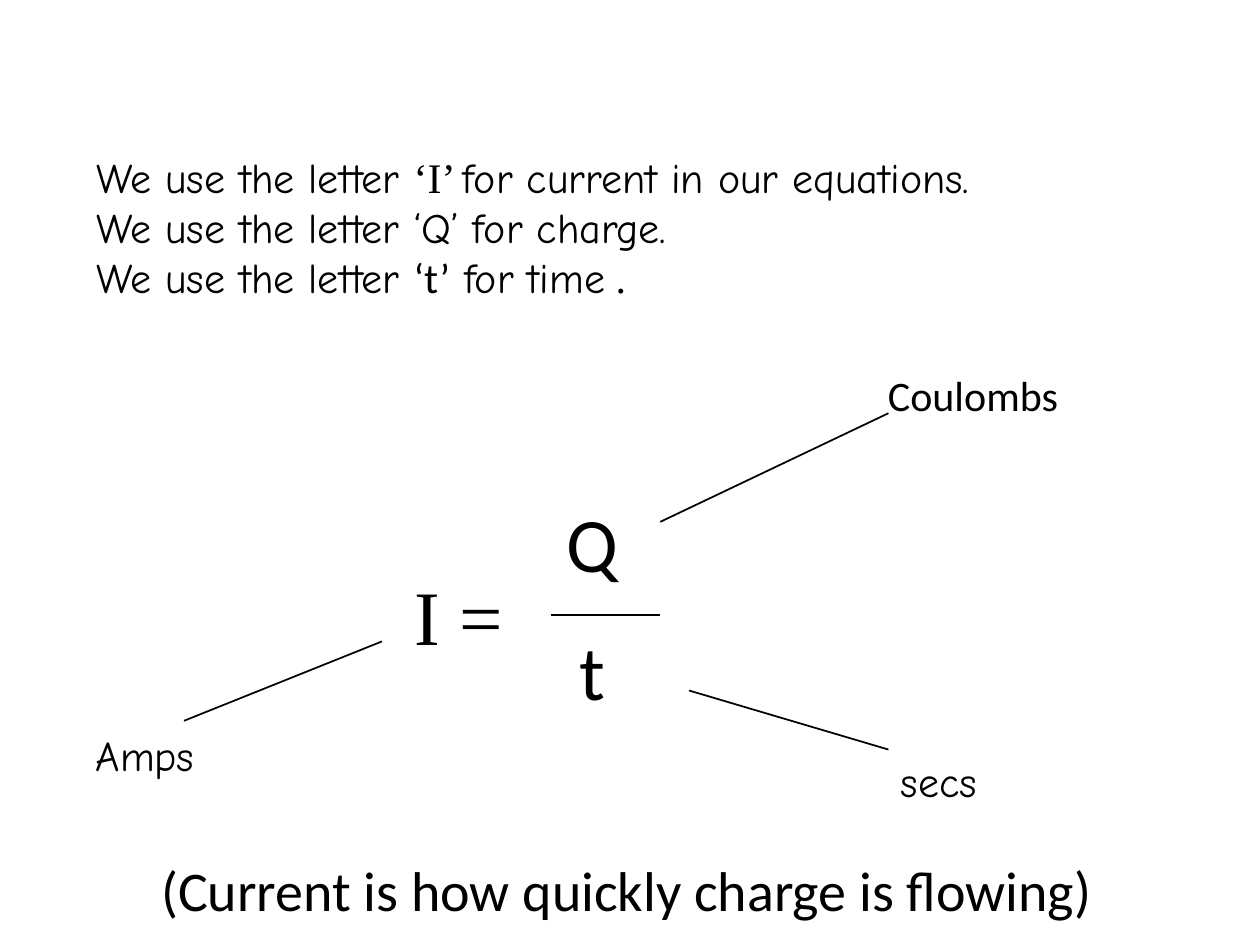
from dataclasses import dataclass

from lxml import etree
from pptx import Presentation
from pptx import util as u
from pptx.dml import color
from pptx.enum import shapes, text
from pptx.oxml import ns


@dataclass(frozen=True)
class Theme:
    ink: color.RGBColor = color.RGBColor(0, 0, 0)
    paper: color.RGBColor = color.RGBColor(255, 255, 255)
    hand: str = "Comic Neue"
    plain: str = "Calibri"
    serif: str = "Times New Roman"
    body: int = 24
    summary: int = 32
    symbol: int = 44
    bar: float = 0.75
    pointer: float = 1


THEME = Theme()


def add_text(slide, place, size, paragraphs):
    """Place a text box; each paragraph is a list of (wording, font) pairs."""
    box = slide.shapes.add_textbox(*map(u.Cm, place))
    frame = box.text_frame
    frame.word_wrap = False
    frame.auto_size = text.MSO_AUTO_SIZE.SHAPE_TO_FIT_TEXT
    for index, pieces in enumerate(paragraphs):
        paragraph = frame.add_paragraph() if index else frame.paragraphs[0]
        for wording, font in pieces:
            run = paragraph.add_run()
            run.text = wording
            run.font.name = font
            run.font.size = u.Pt(size)
            run.font.color.rgb = THEME.ink


def add_label(slide, place, size, wording, font):
    add_text(slide, place, size, [[(wording, font)]])


def add_line(slide, ends, width):
    line = slide.shapes.add_connector(
        shapes.MSO_CONNECTOR.STRAIGHT, *map(u.Cm, ends))
    line.line.color.rgb = THEME.ink
    line.line.width = u.Pt(width)
    etree.SubElement(line._element.spPr, ns.qn("a:effectLst"))


def add_letters(slide):
    hand, plain, serif = THEME.hand, THEME.plain, THEME.serif
    opening = "We use the letter "
    add_text(slide, (1.7, 2.92, 20.24, 3.33), THEME.body, [
        [(opening, hand), ("‘I’ ", serif),
         ("for current in our equations.", hand)],
        [(opening + "‘Q’ for charge.", hand)],
        [(opening, hand), ("‘t’", plain), (" for time", hand), (" .", serif)],
    ])


def add_equation(slide):
    size = THEME.symbol
    add_label(slide, (8.1, 11.33, 2.31, 2.13), size, "I =", THEME.serif)
    add_line(slide, (11.1, 12.4, 13.31, 12.4), THEME.bar)
    add_label(slide, (11.18, 9.86, 1.57, 2.13), size, "Q", THEME.plain)
    add_label(slide, (11.43, 12.45, 1.04, 2.13), size, "t", THEME.plain)


def add_units(slide):
    units = [
        ("secs", THEME.hand, (17.91, 15.11, 2.26, 1.27),
         (13.89, 13.92, 17.91, 15.11)),
        ("Coulombs", THEME.plain, (17.65, 7.32, 3.96, 1.27),
         (13.31, 10.52, 17.91, 8.33)),
        ("Amps", THEME.hand, (1.68, 14.58, 2.67, 1.27),
         (7.7, 12.93, 3.71, 14.53)),
    ]
    for unit, font, place, pointer in units:
        add_line(slide, pointer, THEME.pointer)
        add_label(slide, place, THEME.body, unit, font)


def main():
    deck = Presentation()
    deck.slide_width, deck.slide_height = u.Cm(25.4), u.Cm(19.05)
    slide = deck.slides.add_slide(deck.slide_layouts[6])
    slide.background.fill.solid()
    slide.background.fill.fore_color.rgb = THEME.paper

    # Letters used for each quantity
    add_letters(slide)
    # I = Q / t, with the unit of each letter
    add_equation(slide)
    add_units(slide)
    # Meaning in words
    add_label(slide, (3, 17.12, 19.48, 1.63), THEME.summary,
              "(Current is how quickly charge is flowing)", THEME.plain)

    deck.save("out.pptx")


if __name__ == "__main__":
    main()
